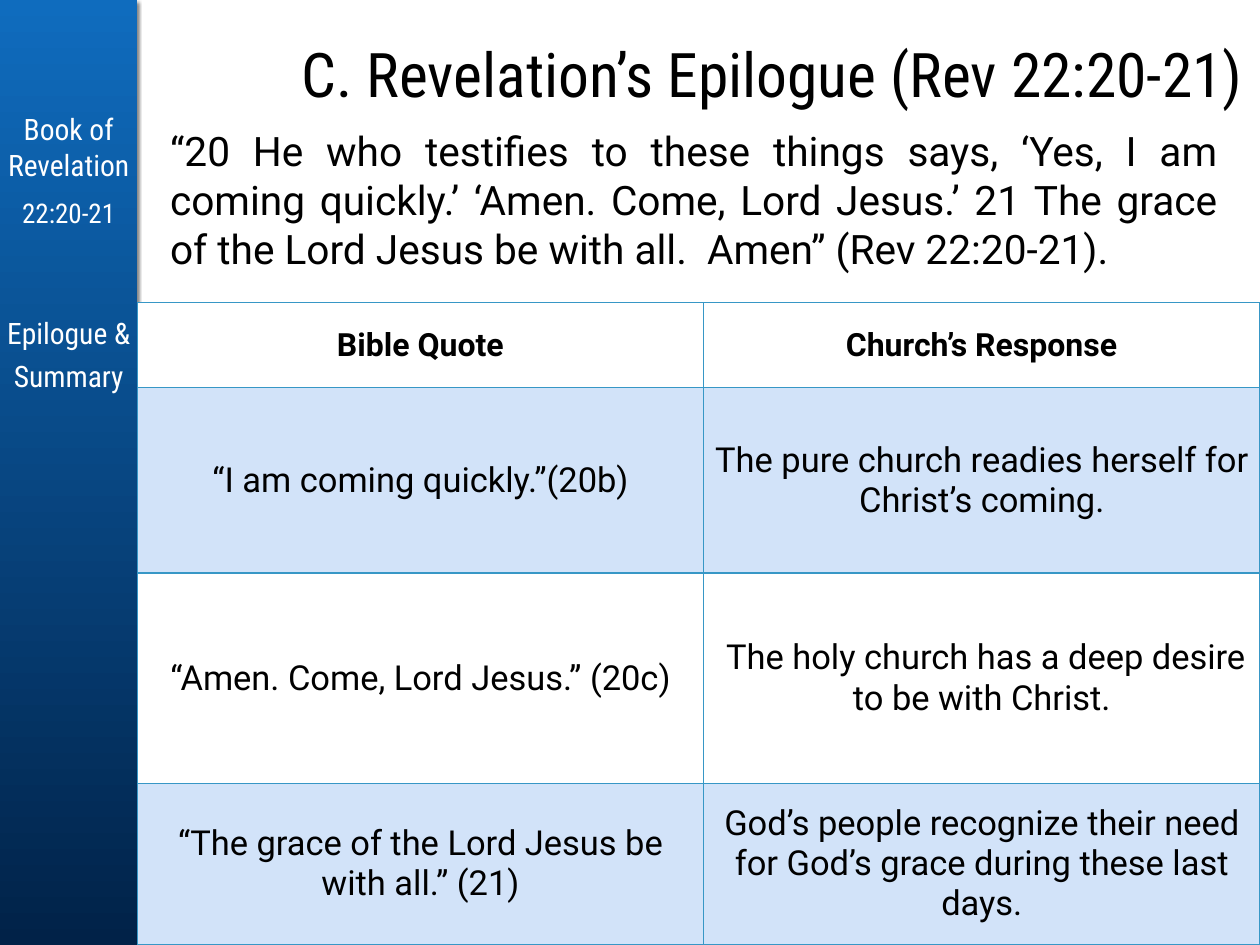
"""Build the Revelation 22:20-21 epilogue slide."""
from lxml import etree
from pptx import Presentation
from pptx.dml.color import RGBColor
from pptx.enum import shapes, text
from pptx.oxml import parse_xml
from pptx.oxml.ns import nsdecls
from pptx.util import Inches, Pt

CONDENSED = "Roboto Condensed"
SIDEBAR_WIDTH = 1.55


def color(value):
    return RGBColor.from_string(value)


def write(holder, content, size=28, font="Roboto", ink="000000", bold=False,
          align=text.PP_ALIGN.CENTER, spacing=1.0):
    for side in ("left", "right", "top", "bottom"):
        setattr(holder, f"margin_{side}", Inches(0.06))
    holder.vertical_anchor = text.MSO_ANCHOR.MIDDLE
    frame = getattr(holder, "text_frame", holder)
    frame.word_wrap = True
    paragraph = frame.paragraphs[0]
    paragraph.alignment = align
    paragraph.line_spacing = spacing
    paragraph.space_before = Pt(0)
    run = paragraph.add_run()
    run.text = content
    run.font.name = font
    run.font.size = Pt(size)
    run.font.bold = bold
    run.font.color.rgb = color(ink)


presentation = Presentation()
presentation.slide_width = Inches(14.22)
presentation.slide_height = Inches(10.67)
slide = presentation.slides.add_slide(presentation.slide_layouts[5])

sidebar = slide.shapes.add_shape(
    shapes.MSO_SHAPE.RECTANGLE, 0, 0, Inches(SIDEBAR_WIDTH), Inches(10.67))
sidebar.line.fill.background()
sidebar.fill.gradient()
sidebar.fill.gradient_angle = 270
for stop, shade in zip(sidebar.fill.gradient_stops, ("0F6CBE", "012248")):
    stop.color.rgb = color(shade)
sidebar.shadow.inherit = False
effects = sidebar.element.spPr.find("{*}effectLst")
effects.append(parse_xml(
    f'<a:outerShdw {nsdecls("a")} blurRad="38100" dist="25400" dir="5400000" rotWithShape="0">'
    '<a:srgbClr val="000000"><a:alpha val="50000"/></a:srgbClr></a:outerShdw>'))

sidebar_labels = [
    ("Book of Revelation", 1.26, 0.79, 24, 1.0),
    ("22:20-21", 2.01, 0.79, 22, 1.0),
    ("Epilogue & Summary", 3.54, 0.84, 24, 1.2),
]
for content, top, height, size, spacing in sidebar_labels:
    label = slide.shapes.add_textbox(0, Inches(top), Inches(SIDEBAR_WIDTH), Inches(height))
    write(label.text_frame, content, size=size, font=CONDENSED, ink="FFFFFF", spacing=spacing)

title = slide.shapes.title
title.left, title.top = Inches(SIDEBAR_WIDTH), Inches(0.12)
title.width, title.height = Inches(12.55), Inches(1.08)
title.text_frame.auto_size = text.MSO_AUTO_SIZE.NONE
write(title.text_frame, "C. Revelation’s Epilogue (Rev 22:20-21)", size=50,
      font=CONDENSED, align=text.PP_ALIGN.RIGHT, spacing=1.4)

passage = slide.shapes.add_textbox(Inches(1.86), Inches(1.36), Inches(11.95), Inches(1.78))
write(passage.text_frame,
      "“20 He who testifies to these things says, ‘Yes, I am coming quickly.’ "
      "‘Amen. Come, Lord Jesus.’ 21 The grace of the Lord Jesus be with all.  "
      "Amen” (Rev 22:20-21).", size=33, align=text.PP_ALIGN.JUSTIFY)

responses = [
    ("Bible Quote", "Church’s Response"),
    ("“I am coming quickly.”(20b)", "The pure church readies herself for Christ’s coming."),
    ("“Amen. Come, Lord Jesus.” (20c)",
     " The holy church has a deep desire to be with Christ."),
    ("“The grace of the Lord Jesus be with all.” (21)",
     "God’s people recognize their need for God’s grace during these last days."),
]
table = slide.shapes.add_table(
    4, 2, Inches(SIDEBAR_WIDTH), Inches(3.42), Inches(12.67), Inches(7.24)).table
table.first_row = table.horz_banding = False
for column, width in zip(table.columns, (6.39, 6.28)):
    column.width = Inches(width)
for row, height in zip(table.rows, (0.96, 2.09, 2.38, 1.81)):
    row.height = Inches(height)

for row_index, entries in enumerate(responses):
    header = row_index == 0
    for column_index, content in enumerate(entries):
        cell = table.cell(row_index, column_index)
        write(cell, content, size=26 if header else 28, bold=header)
        cell.fill.solid()
        cell.fill.fore_color.rgb = color("D2E3F9" if row_index % 2 else "FFFFFF")
        properties = cell._tc.get_or_add_tcPr()
        for position, edge in enumerate(("lnL", "lnR", "lnT", "lnB")):
            properties.insert(position, etree.fromstring(
                f'<a:{edge} {nsdecls("a")} w="12700"><a:solidFill>'
                f'<a:srgbClr val="3797C6"/></a:solidFill></a:{edge}>'))

presentation.save("out.pptx")
